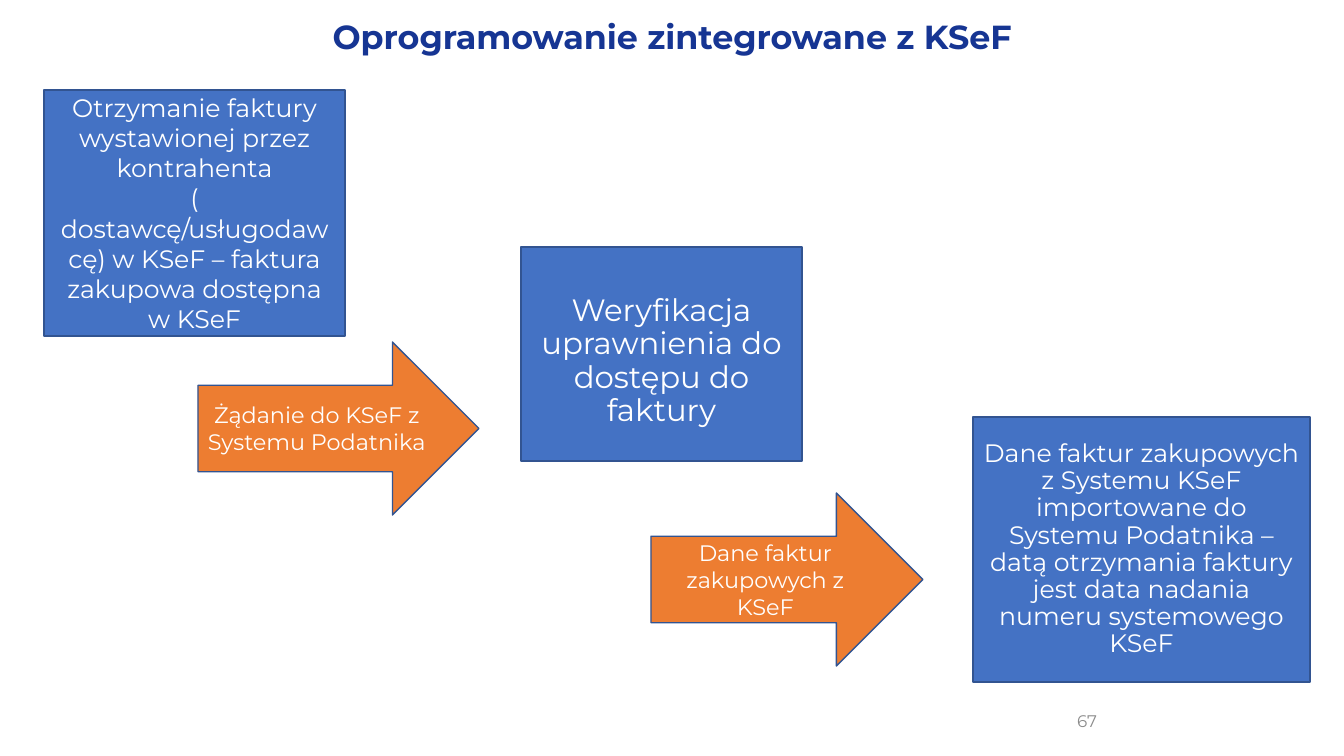
"""Builds the slide on receiving purchase invoices through KSeF-integrated software."""
from pptx import Presentation
from pptx.dml.color import RGBColor
from pptx.enum.shapes import MSO_SHAPE as SHAPE
from pptx.enum.text import MSO_ANCHOR as ANCHOR, MSO_AUTO_SIZE as AUTO, PP_ALIGN as ALIGN
from pptx.util import Pt

EMU_PER_PX = 914400 / 100.8
FONT = "Montserrat"
COLORS = {
    "step": "4472C4",
    "request": "ED7D31",
    "outline": "325491",
    "title": "163593",
    "number": "8C8C8C",
    "white": "FFFFFF",
}


def px(n):
    return round(n * EMU_PER_PX)


def color(name):
    return RGBColor.from_string(COLORS[name])


def place(sp, left, top, width, height):
    sp.left, sp.top, sp.width, sp.height = map(px, (left, top, width, height))


def write(sp, text, size, ink, align=ALIGN.CENTER, anchor=ANCHOR.MIDDLE,
          spacing=1.0, bold=False):
    tf = sp.text_frame
    tf.text = text
    tf.word_wrap = True
    tf.auto_size = AUTO.NONE
    tf.vertical_anchor = anchor
    p = tf.paragraphs[0]
    p.alignment = align
    p.line_spacing = spacing
    p.space_before = Pt(0)
    for r in p.runs:
        r.font.name = FONT
        r.font.size = Pt(size)
        r.font.bold = bold
        r.font.color.rgb = color(ink)


def add_block(slide, shape, fill, box, text, size, spacing=1.0):
    sp = slide.shapes.add_shape(shape, *map(px, box))
    sp.shadow.inherit = False
    sp.fill.solid()
    sp.fill.fore_color.rgb = color(fill)
    sp.line.color.rgb = color("outline")
    sp.line.width = Pt(1)
    write(sp, text, size, "white", spacing=spacing)
    return sp


def add_step(slide, box, text, size, spacing=1.0):
    return add_block(slide, SHAPE.RECTANGLE, "step", box, text, size, spacing)


def add_request(slide, box, text):
    return add_block(slide, SHAPE.RIGHT_ARROW, "request", box, text, 16)


def add_title(slide, text):
    sp = slide.shapes.title
    place(sp, 292, 19, 760, 71)
    write(sp, text, 23.8, "title", anchor=ANCHOR.TOP, spacing=0.8, bold=True)


def add_number(slide, text):
    sp = slide.shapes.add_textbox(*map(px, (880, 701, 227, 40)))
    write(sp, text, 12, "number", align=ALIGN.RIGHT)


def main():
    prs = Presentation()
    prs.slide_width, prs.slide_height = px(1344), px(756)
    slide = prs.slides.add_slide(prs.slide_layouts[5])

    add_title(slide, "Oprogramowanie zintegrowane z KSeF")
    add_step(slide, (44, 90, 301, 246),
             "Otrzymanie faktury wystawionej przez kontrahenta\v"
             "( dostawcę/usługodawcę) w KSeF – faktura zakupowa dostępna w KSeF", 18)
    add_request(slide, (198, 342, 281, 173), "Żądanie do KSeF z Systemu Podatnika")
    check = add_step(slide, (521, 247, 281, 214),
                     "Weryfikacja uprawnienia do dostępu do faktury", 22, 0.9)
    check.text_frame.margin_top = px(20)
    add_request(slide, (651, 493, 272, 173), "Dane faktur zakupowych z KSeF")
    result = add_step(slide, (973, 417, 337, 265),
                      "Dane faktur zakupowych z Systemu KSeF importowane do Systemu "
                      "Podatnika – datą otrzymania faktury jest data nadania numeru "
                      "systemowego KSeF", 18, 0.9)
    tf = result.text_frame
    tf.margin_left = tf.margin_right = px(7)
    tf.margin_top = tf.margin_bottom = px(4)
    add_number(slide, "67")

    prs.save("out.pptx")


if __name__ == "__main__":
    main()
